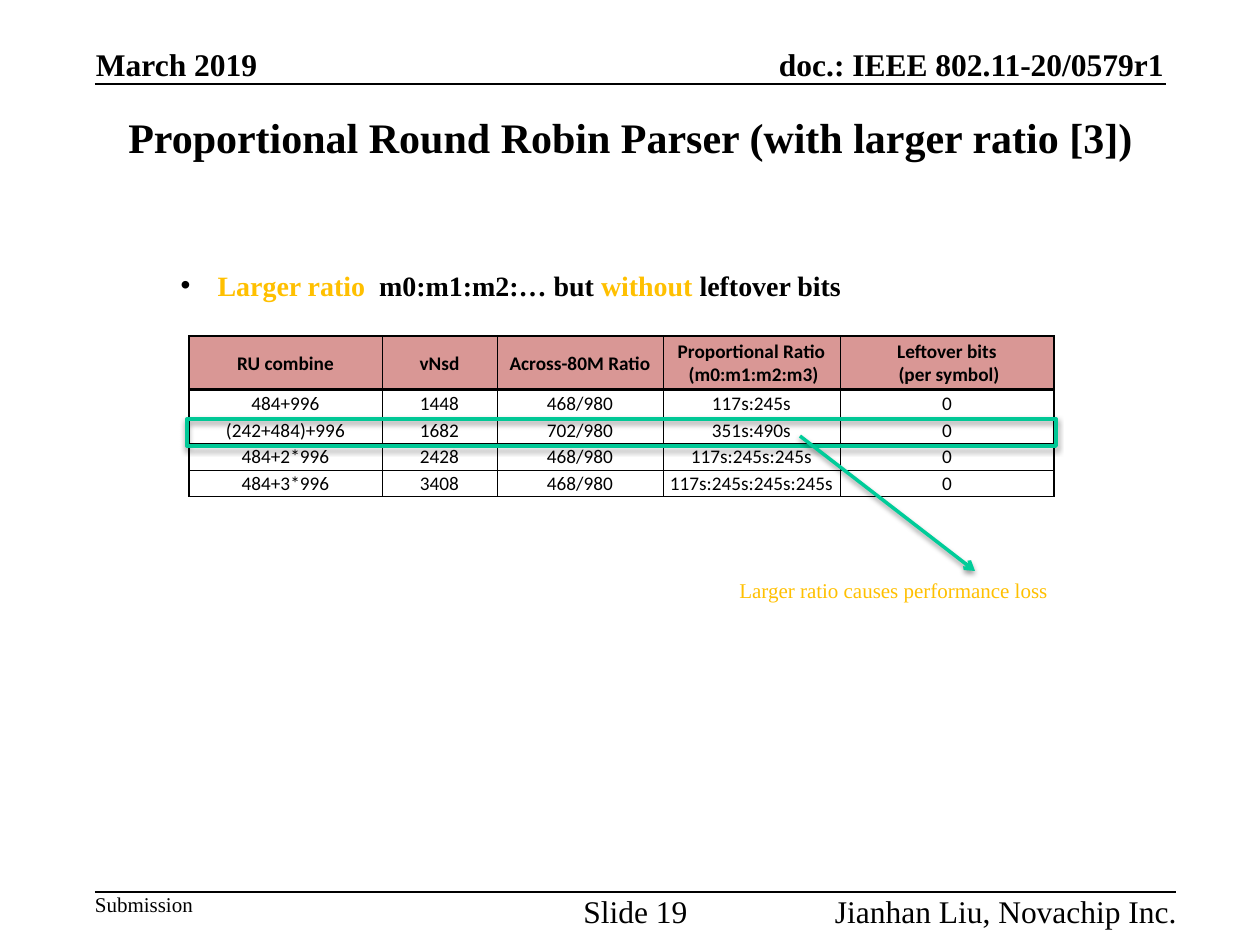
"""Build the slide on the proportional round robin parser with larger ratio."""
import lxml.etree
import pptx
import pptx.dml.color
import pptx.enum.shapes
import pptx.enum.text
import pptx.oxml.ns
import pptx.util

EMU_PER_PX = 914400 / 126
BLACK = pptx.dml.color.RGBColor(0x00, 0x00, 0x00)
AMBER = pptx.dml.color.RGBColor(0xFF, 0xC0, 0x00)
ROSE = pptx.dml.color.RGBColor(0xD9, 0x97, 0x95)
GREEN = pptx.dml.color.RGBColor(0x00, 0xC8, 0x96)
ARROW_GREEN = pptx.dml.color.RGBColor(0x00, 0xCC, 0x99)
ALIGN = pptx.enum.text.PP_ALIGN
ANCHOR = pptx.enum.text.MSO_ANCHOR

COLUMN_WIDTHS = [193, 115, 166, 177, 214]
ROW_HEIGHTS = [54, 27, 26, 27, 26]
ROWS = [
    ["RU combine", "vNsd", "Across-80M Ratio",
     "Proportional Ratio\n (m0:m1:m2:m3)", "Leftover bits\n (per symbol)"],
    ["484+996", "1448", "468/980", "117s:245s", "0"],
    ["(242+484)+996", "1682", "702/980", "351s:490s", "0"],
    ["484+2*996", "2428", "468/980", "117s:245s:245s", "0"],
    ["484+3*996", "3408", "468/980", "117s:245s:245s:245s", "0"],
]


def px(length):
    return pptx.util.Emu(round(length * EMU_PER_PX))


def place(item, left, top, width, height):
    item.left, item.top, item.width, item.height = map(px, (left, top, width, height))


def child(parent, tag, **attributes):
    element = lxml.etree.SubElement(parent, pptx.oxml.ns.qn(tag))
    for name, value in attributes.items():
        element.set(name, str(value))
    return element


def write(frame, spans, size=18, bold=False, align=ALIGN.LEFT, color=BLACK,
          font="Times New Roman", anchor=ANCHOR.TOP, wrap=False):
    """Fill a frame with one paragraph of a text or of (text, colour) spans."""
    frame.auto_size = pptx.enum.text.MSO_AUTO_SIZE.NONE
    frame.word_wrap = wrap
    frame.vertical_anchor = anchor
    para = frame.paragraphs[0]
    para.alignment = align
    para.space_before = pptx.util.Pt(0)
    for text, ink in [(spans, color)] if isinstance(spans, str) else spans:
        for number, line in enumerate(text.split("\n")):
            if number:
                para.add_line_break()
            span = para.add_run()
            span.text = line
            span.font.name = font
            span.font.size = pptx.util.Pt(size)
            span.font.bold = bold
            span.font.color.rgb = ink
    return para


def add_text(page, text, left, top, width, height, inset=True, **style):
    box = page.shapes.add_textbox(px(left), px(top), px(width), px(height))
    frame = box.text_frame
    if not inset:
        frame.margin_left = frame.margin_right = frame.margin_top = frame.margin_bottom = 0
    write(frame, text, **style)


def add_line(page, start, end, color=BLACK, width=1):
    line = page.shapes.add_connector(
        pptx.enum.shapes.MSO_CONNECTOR.STRAIGHT, *map(px, start + end))
    line.line.color.rgb = color
    line.line.width = pptx.util.Pt(width)
    child(line._element.spPr, "a:effectLst")
    return line


def add_shadow(item, distance, opacity):
    effects = item._element.spPr.find(pptx.oxml.ns.qn("a:effectLst"))
    shadow = child(effects, "a:outerShdw", blurRad=pptx.util.Pt(3.1),
                   dist=pptx.util.Pt(distance), dir=90 * 60000, rotWithShape=0)
    ink = child(shadow, "a:srgbClr", val=BLACK)
    child(ink, "a:alpha", val=opacity * 1000)


def set_borders(cell, widths):
    """Draw the left, right, top and bottom borders ahead of the cell's fill."""
    properties = cell._tc.get_or_add_tcPr()
    for position, (side, width) in enumerate(zip("LRTB", widths)):
        border = child(properties, f"a:ln{side}", w=pptx.util.Pt(width))
        child(child(border, "a:solidFill"), "a:srgbClr", val=BLACK)
        properties.insert(position, border)


def add_ratio_table(page, left, top):
    frame = page.shapes.add_table(len(ROWS), len(COLUMN_WIDTHS), px(left), px(top),
                                  px(sum(COLUMN_WIDTHS)), px(sum(ROW_HEIGHTS)))
    table = frame.table
    table.first_row = table.horz_banding = False
    for column, width in zip(table.columns, COLUMN_WIDTHS):
        column.width = px(width)
    last = len(COLUMN_WIDTHS) - 1
    for r, (texts, height) in enumerate(zip(ROWS, ROW_HEIGHTS)):
        table.rows[r].height = px(height)
        for c, text in enumerate(texts):
            cell = table.cell(r, c)
            cell.margin_left = cell.margin_right = cell.margin_top = px(1)
            cell.margin_bottom = 0
            write(cell.text_frame, text, size=11, bold=r == 0,
                  align=ALIGN.CENTER, font="Calibri", wrap=True)
            cell.vertical_anchor = ANCHOR.MIDDLE
            if r == 0:
                cell.fill.solid()
                cell.fill.fore_color.rgb = ROSE
            else:
                cell.fill.background()
            set_borders(cell, (1 if c == 0 else 0.5, 1 if c == last else 0.5,
                               {0: 1, 1: 2}.get(r, 0.5), 2 if r == 0 else 0.5))


def add_highlight(page, left, top, width, height):
    box = page.shapes.add_shape(pptx.enum.shapes.MSO_SHAPE.RECTANGLE,
                                px(left), px(top), px(width), px(height))
    box.shadow.inherit = False
    box.fill.background()
    box.line.color.rgb = GREEN
    box.line.width = pptx.util.Pt(2.25)
    add_shadow(box, distance=1.8, opacity=35)


def add_arrow(page, start, end):
    arrow = add_line(page, start, end, color=ARROW_GREEN, width=2)
    child(arrow.line._get_or_add_ln(), "a:tailEnd", type="arrow")
    add_shadow(arrow, distance=1.6, opacity=38)


def fill_title(page):
    title = page.shapes.title
    place(title, 95, 95, 1071, 84)
    write(title.text_frame, "Proportional Round Robin Parser (with larger ratio [3])",
          size=24, bold=True, align=ALIGN.CENTER, anchor=ANCHOR.MIDDLE, wrap=True)


def fill_bullet(page):
    body = page.placeholders[1]
    place(body, 168, 262, 690, 47)
    para = write(body.text_frame, [
        (" ", BLACK), ("Larger ratio ", AMBER), (" m0:m1:m2:… but ", BLACK),
        ("without", AMBER), (" leftover bits", BLACK)], size=16, bold=True)
    properties = para._p.get_or_add_pPr()
    properties.set("marL", str(px(30)))
    properties.set("indent", str(-px(30)))
    child(properties, "a:buFont", typeface="Arial")
    child(properties, "a:buChar", char="•")


def main():
    deck = pptx.Presentation()
    deck.slide_width, deck.slide_height = px(1260), px(945)
    page = deck.slides.add_slide(deck.slide_layouts[1])

    add_text(page, "March 2019", 96, 45, 163, 38, inset=False,
             bold=True, anchor=ANCHOR.BOTTOM)
    add_text(page, "doc.: IEEE 802.11-20/0579r1", 712, 45, 452, 38, inset=False,
             bold=True, align=ALIGN.RIGHT, anchor=ANCHOR.BOTTOM)
    add_line(page, (95, 84), (1166, 84))
    add_text(page, "Submission", 95, 892, 98, 25, inset=False, size=12)
    add_line(page, (95, 892), (1176, 892))
    add_text(page, "Slide 19", 599, 892, 73, 25, inset=False, align=ALIGN.CENTER)
    add_text(page, "Jianhan Liu, Novachip Inc.", 949, 892, 228, 25, inset=False,
             align=ALIGN.RIGHT)

    fill_title(page)
    fill_bullet(page)
    add_ratio_table(page, 189, 336)
    add_highlight(page, 187, 419, 869, 27)
    add_text(page, "Larger ratio causes performance loss", 727, 571, 498, 50,
             size=12, color=AMBER)
    add_arrow(page, (800, 436), (975, 571))
    deck.save("out.pptx")


if __name__ == "__main__":
    main()
